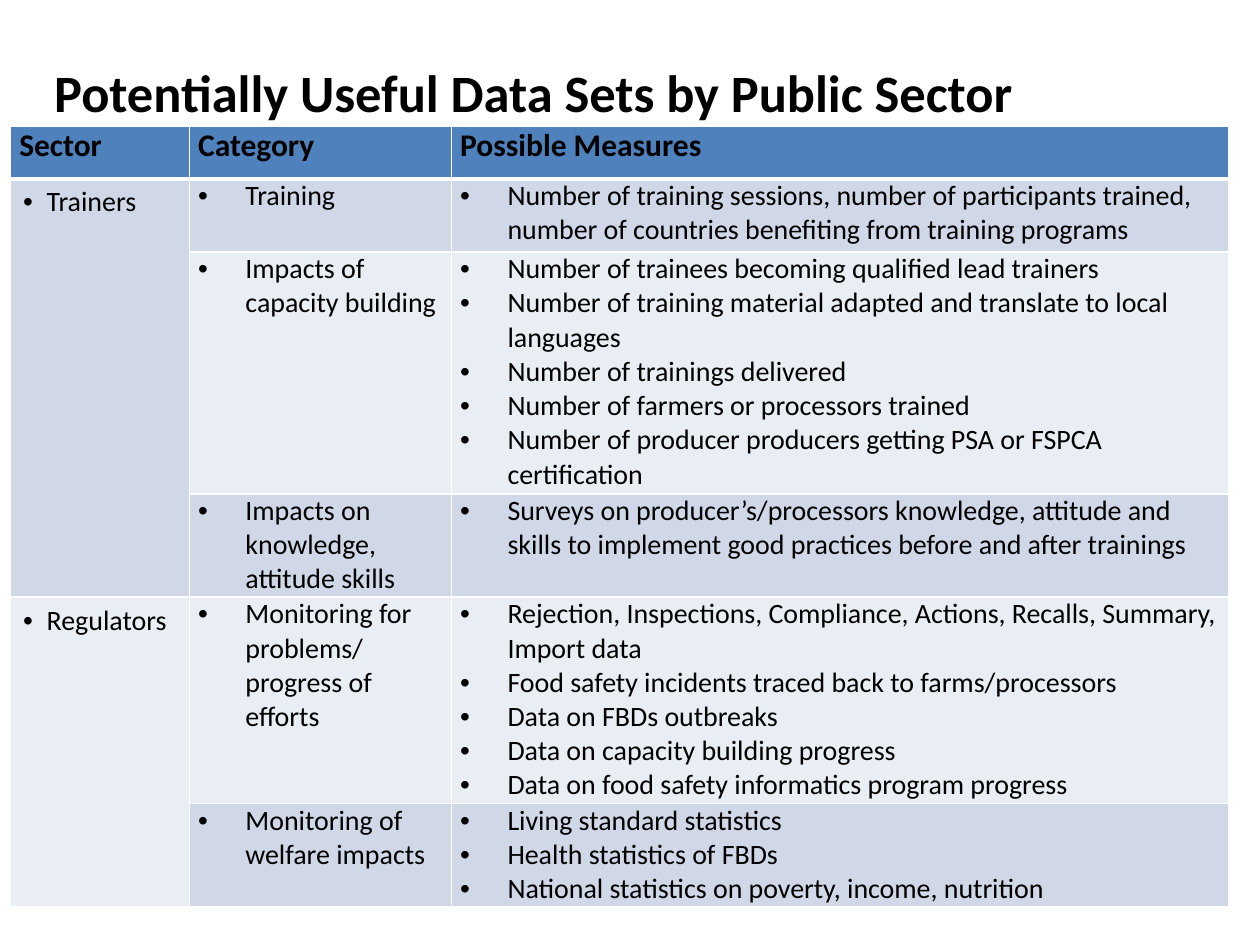
"""Builds a slide with a table of useful data sets by public sector."""
from lxml.etree import SubElement
from pptx import Presentation
from pptx.dml.color import RGBColor as RGB
from pptx.enum.text import MSO_ANCHOR as ANCHOR, PP_ALIGN as ALIGN
from pptx.oxml.ns import qn
from pptx.util import Pt

COLORS = {"text": "000000", "border": "FFFFFF", "header": "4F81BD",
          "dark": "D0D8E8", "light": "E9EDF4"}
COL_WIDTHS = [102.24, 149.76, 444.24]
ROW_HEIGHTS = [30.24, 41.76, 138.24, 59.04, 118.08, 59.04]
HEADERS = ["Sector", "Category", "Possible Measures"]
SECTORS = [
    ("Trainers", [
        ("Training", [
            "Number of training sessions, number of participants trained, "
            "number of countries benefiting from training programs"]),
        ("Impacts of capacity building", [
            "Number of trainees becoming qualified lead trainers",
            "Number of training material adapted and translate to local languages",
            "Number of trainings delivered",
            "Number of farmers or processors trained",
            "Number of producer producers getting PSA or FSPCA certification"]),
        ("Impacts on knowledge, attitude skills", [
            "Surveys on producer’s/processors knowledge, attitude and skills "
            "to implement good practices before and after trainings"]),
    ]),
    ("Regulators", [
        ("Monitoring for problems/ progress of efforts", [
            "Rejection, Inspections, Compliance, Actions, Recalls, Summary, Import data",
            "Food safety incidents traced back to farms/processors",
            "Data on FBDs outbreaks",
            "Data on capacity building progress",
            "Data on food safety informatics program progress"]),
        ("Monitoring of welfare impacts", [
            "Living standard statistics",
            "Health statistics of FBDs",
            "National statistics on poverty, income, nutrition"]),
    ]),
]


class SlideBuilder:
    def __init__(self, prs, font="Calibri"):
        self.font = font
        self.slide = prs.slides.add_slide(prs.slide_layouts[5])

    def run(self, p, text, size, bold=False):
        r = p.add_run()
        r.text = text
        r.font.name, r.font.size, r.font.bold = self.font, Pt(size), bold
        r.font.color.rgb = RGB.from_string(COLORS["text"])

    def title(self, text, x, y, w, h):
        sp = self.slide.shapes.title
        sp.left, sp.top, sp.width, sp.height = Pt(x), Pt(y), Pt(w), Pt(h)
        tf = sp.text_frame
        tf.vertical_anchor = ANCHOR.MIDDLE
        p = tf.paragraphs[0]
        p.alignment = ALIGN.LEFT
        self.run(p, text, 30, True)

    def table(self, x, y, widths, heights):
        frame = self.slide.shapes.add_table(
            len(heights), len(widths), Pt(x), Pt(y), Pt(sum(widths)), Pt(sum(heights)))
        table = frame.table
        table.horz_banding = False
        for col, w in zip(table.columns, widths):
            col.width = Pt(w)
        for row, h in zip(table.rows, heights):
            row.height = Pt(h)
        return table

    def bullet(self, p, indent):
        pPr = p._p.get_or_add_pPr()
        pPr.set("marL", str(Pt(indent)))
        pPr.set("indent", str(-Pt(indent)))
        SubElement(pPr, qn("a:buFont"), typeface="Arial")
        SubElement(pPr, qn("a:buChar"), char="•")

    def cell_style(self, cell, fill, top=1, bottom=1):
        tcPr = cell._tc.get_or_add_tcPr()
        for side, width in zip("LRTB", (1, 1, top, bottom)):
            ln = SubElement(tcPr, qn(f"a:ln{side}"), w=str(Pt(width)))
            solid = SubElement(ln, qn("a:solidFill"))
            SubElement(solid, qn("a:srgbClr"), val=COLORS["border"])
        cell.fill.solid()
        cell.fill.fore_color.rgb = RGB.from_string(COLORS[fill])

    def cell_text(self, cell, texts, size=16, bold=False, indent=0, margins=(5.04, 0)):
        cell.margin_left = cell.margin_right = Pt(margins[0])
        cell.margin_top = cell.margin_bottom = Pt(margins[1])
        tf = cell.text_frame
        for i, text in enumerate(texts):
            p = tf.add_paragraph() if i else tf.paragraphs[0]
            if indent:
                self.bullet(p, indent)
            self.run(p, text, size, bold)


def main():
    prs = Presentation()
    prs.slide_width, prs.slide_height = Pt(720), Pt(540)
    b = SlideBuilder(prs)
    b.title("Potentially Useful Data Sets by Public Sector", 23.76, 31.68, 648, 41.76)
    table = b.table(6, 72, COL_WIDTHS, ROW_HEIGHTS)

    for c, text in enumerate(HEADERS):
        b.cell_style(table.cell(0, c), "header", bottom=3)
        b.cell_text(table.cell(0, c), [text], 18, True)
    table.cell(0, 0).text_frame.paragraphs[0].alignment = ALIGN.JUSTIFY

    row = 1
    for sector, categories in SECTORS:
        first = row
        sector_fill = "dark" if first % 2 else "light"
        for category, measures in categories:
            fill = "dark" if row % 2 else "light"
            top = 3 if row == 1 else 1
            for c, color in enumerate((sector_fill, fill, fill)):
                b.cell_style(table.cell(row, c), color, top)
            b.cell_text(table.cell(row, 1), [category], indent=27)
            b.cell_text(table.cell(row, 2), measures, indent=27)
            row += 1
        table.cell(first, 0).merge(table.cell(row - 1, 0))
        b.cell_text(table.cell(first, 0), [sector], indent=13.5, margins=(7.2, 3.6))

    prs.save("out.pptx")


if __name__ == "__main__":
    main()
